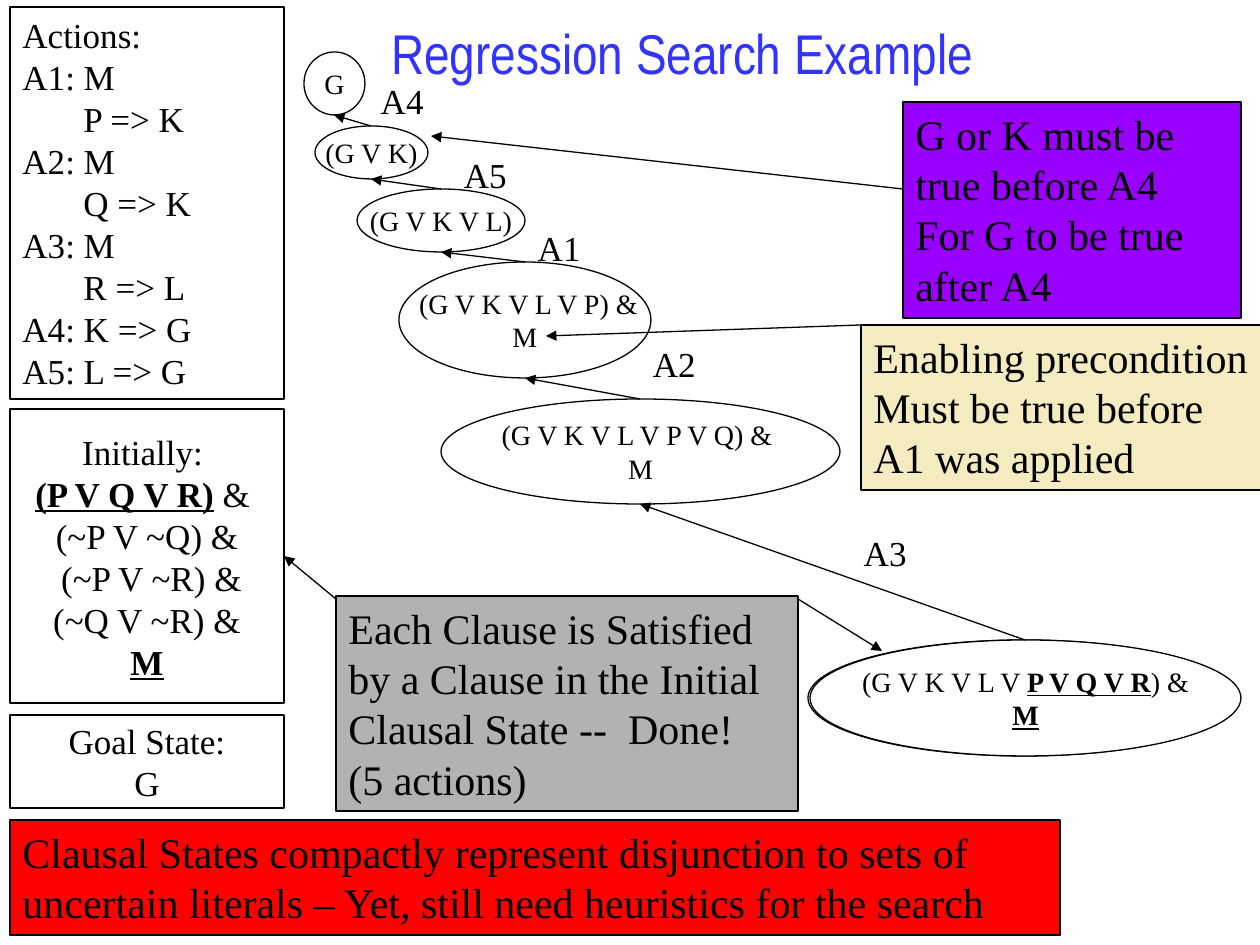
"""Build the regression search example slide: clausal states, actions and notes."""
from dataclasses import dataclass
from typing import Optional

import lxml.etree
import pptx
import pptx.dml.color
import pptx.enum.shapes
import pptx.enum.text
import pptx.oxml.ns
import pptx.util

RGBColor = pptx.dml.color.RGBColor
MSO_SHAPE = pptx.enum.shapes.MSO_SHAPE
PP_ALIGN = pptx.enum.text.PP_ALIGN
MSO_ANCHOR = pptx.enum.text.MSO_ANCHOR

BLACK = RGBColor(0x00, 0x00, 0x00)
WHITE = RGBColor(0xFF, 0xFF, 0xFF)
BLUE = RGBColor(0x33, 0x33, 0xFF)
PURPLE = RGBColor(0x99, 0x00, 0xFF)
GREY = RGBColor(0xB2, 0xB2, 0xB2)
RED = RGBColor(0xFF, 0x00, 0x00)
CREAM = RGBColor(0xF5, 0xEB, 0xC1)

PX_PER_INCH = 126
SERIF = "Times New Roman"
LINE_WIDTH = pptx.util.Pt(0.75)
EFFECTS = pptx.oxml.ns.qn("a:effectLst")
TAIL_END = pptx.oxml.ns.qn("a:tailEnd")
INDENT_MARK = ">"
STRONG_MARK = "*"


@dataclass(frozen=True)
class Style:
    size: int
    align: PP_ALIGN = PP_ALIGN.LEFT
    anchor: MSO_ANCHOR = MSO_ANCHOR.TOP
    wrap: bool = True
    font: str = SERIF
    color: RGBColor = BLACK
    indent: int = 0


@dataclass(frozen=True)
class Box:
    at: tuple[int, int, int, int]
    lines: tuple[str, ...]
    style: Style
    fill: Optional[RGBColor] = None
    kind: MSO_SHAPE = MSO_SHAPE.RECTANGLE


@dataclass(frozen=True)
class Arrow:
    start: tuple[int, int]
    end: tuple[int, int]


TITLE = Style(32, PP_ALIGN.CENTER, MSO_ANCHOR.MIDDLE, font="Arial Narrow", color=BLUE)
ACTIONS = Style(20, indent=61)
FACTS = Style(20, PP_ALIGN.CENTER, MSO_ANCHOR.MIDDLE, False)
STATE = Style(16, PP_ALIGN.CENTER, MSO_ANCHOR.MIDDLE, False, indent=14)
LABEL = Style(20, PP_ALIGN.RIGHT, wrap=False)
NOTE = Style(24)
OPEN_NOTE = Style(24, wrap=False)

INITIALLY = Box((10, 409, 274, 294), (
    "Initially: ", "*(P V Q V R)* & ", "(~P V ~Q) &", " (~P V ~R) &", " (~Q V ~R) & ", "*M*",
), FACTS, WHITE)

BOXES = (
    Box((10, 7, 274, 392), (
        "Actions:", "A1: M", ">P => K", "A2: M", ">Q => K", "A3: M", ">R => L",
        "A4: K => G", "A5: L => G",
    ), ACTIONS),
    Box((10, 715, 274, 93), ("Goal State:", "G"), FACTS),
    Box((903, 102, 338, 216), (
        "G or K must be true before A4", "For G to be true after A4",
    ), NOTE, PURPLE),
    Box((336, 596, 462, 215), (
        "Each Clause is Satisfied by a Clause in the Initial Clausal State --  Done!",
        "(5 actions)",
    ), NOTE, GREY),
    Box((10, 820, 1050, 115), (
        "Clausal States compactly represent disjunction to sets of uncertain literals"
        " – Yet, still need heuristics for the search",
    ), NOTE, RED),
    Box((861, 325, 401, 165), (
        "Enabling precondition", "Must be true before", "A1 was applied",
    ), OPEN_NOTE, CREAM),
)


def state(at: tuple[int, int, int, int], *lines: str, fill: Optional[RGBColor] = None) -> Box:
    return Box(at, lines, STATE, fill, MSO_SHAPE.OVAL)


STATES = (
    state((304, 52, 61, 63), "G"),
    state((315, 126, 113, 53), "(G V K)"),
    state((357, 189, 168, 63), "(G V K V L)"),
    state((399, 262, 252, 116), ">(G V K V L V P) & ", "M"),
    state((441, 399, 399, 105), "(G V K V L V P V Q) & ", "M"),
    state((810, 640, 431, 116), "(G V K V L V *P V Q V R*) &", "*M*", fill=WHITE),
)
FINAL_STATE_RIM = state((808, 640, 431, 116))

LABELS = {
    "A4": (368, 73), "A5": (451, 147), "A1": (525, 220), "A2": (640, 336), "A3": (851, 525),
}

NOTE_ARROWS = (
    Arrow((903, 189), (431, 136)),
    Arrow((798, 599), (882, 651)),
    Arrow((861, 325), (546, 336)),
)


def px(length: int) -> int:
    return round(length * 914400 / PX_PER_INCH)


def write_text(frame, lines: tuple[str, ...], style: Style) -> None:
    frame.word_wrap = style.wrap
    frame.vertical_anchor = style.anchor
    for index, line in enumerate(lines):
        paragraph = frame.add_paragraph() if index else frame.paragraphs[0]
        paragraph.alignment = style.align
        if line.startswith(INDENT_MARK):
            paragraph._p.get_or_add_pPr().set("marL", str(px(style.indent)))
        paragraph.font.name = style.font
        paragraph.font.size = pptx.util.Pt(style.size)
        paragraph.font.color.rgb = style.color
        pieces = line.removeprefix(INDENT_MARK).split(STRONG_MARK)
        segments = [(text, bool(place % 2)) for place, text in enumerate(pieces) if text]
        for text, strong in segments:
            run = paragraph.add_run()
            run.text = text
            if strong:
                font = paragraph.font if len(segments) == 1 else run.font
                font.bold = font.underline = True


def add_text(slide, at: tuple[int, int, int, int], text: str, style: Style) -> None:
    write_text(slide.shapes.add_textbox(*map(px, at)).text_frame, (text,), style)


def add_box(slide, box: Box):
    shape = slide.shapes.add_shape(box.kind, *map(px, box.at))
    shape.shadow.inherit = False
    shape.line.color.rgb = BLACK
    shape.line.width = LINE_WIDTH
    if box.fill is None:
        shape.fill.background()
    else:
        shape.fill.solid()
        shape.fill.fore_color.rgb = box.fill
    write_text(shape.text_frame, box.lines, box.style)
    return shape


def add_arrow(slide, arrow: Arrow):
    connector = slide.shapes.add_connector(
        pptx.enum.shapes.MSO_CONNECTOR.STRAIGHT, *map(px, arrow.start + arrow.end))
    connector.line.color.rgb = BLACK
    connector.line.width = LINE_WIDTH
    lxml.etree.SubElement(connector.line._get_or_add_ln(), TAIL_END, type="triangle")
    lxml.etree.SubElement(connector._element.spPr, EFFECTS)
    return connector


def regression_arrow(earlier: Box, later: Box) -> Arrow:
    left, top, width, height = earlier.at
    later_left, later_top, later_width, _ = later.at
    return Arrow((later_left + later_width // 2, later_top), (left + width // 2, top + height))


def main() -> None:
    presentation = pptx.Presentation()
    presentation.slide_width, presentation.slide_height = px(1260), px(945)
    slide = presentation.slides.add_slide(presentation.slide_layouts[6])

    add_text(slide, (147, 0, 1071, 105), "Regression Search Example", TITLE)
    for box in BOXES + (FINAL_STATE_RIM,) + STATES:
        add_box(slide, box)
    initially = add_box(slide, INITIALLY)
    for action, corner in LABELS.items():
        add_text(slide, corner + (68, 54), action, LABEL)

    for earlier, later in zip(STATES, STATES[1:]):
        add_arrow(slide, regression_arrow(earlier, later))
    for arrow in NOTE_ARROWS:
        add_arrow(slide, arrow)
    add_arrow(slide, Arrow((336, 599), (284, 556))).end_connect(initially, 3)

    presentation.save("out.pptx")


if __name__ == "__main__":
    main()
